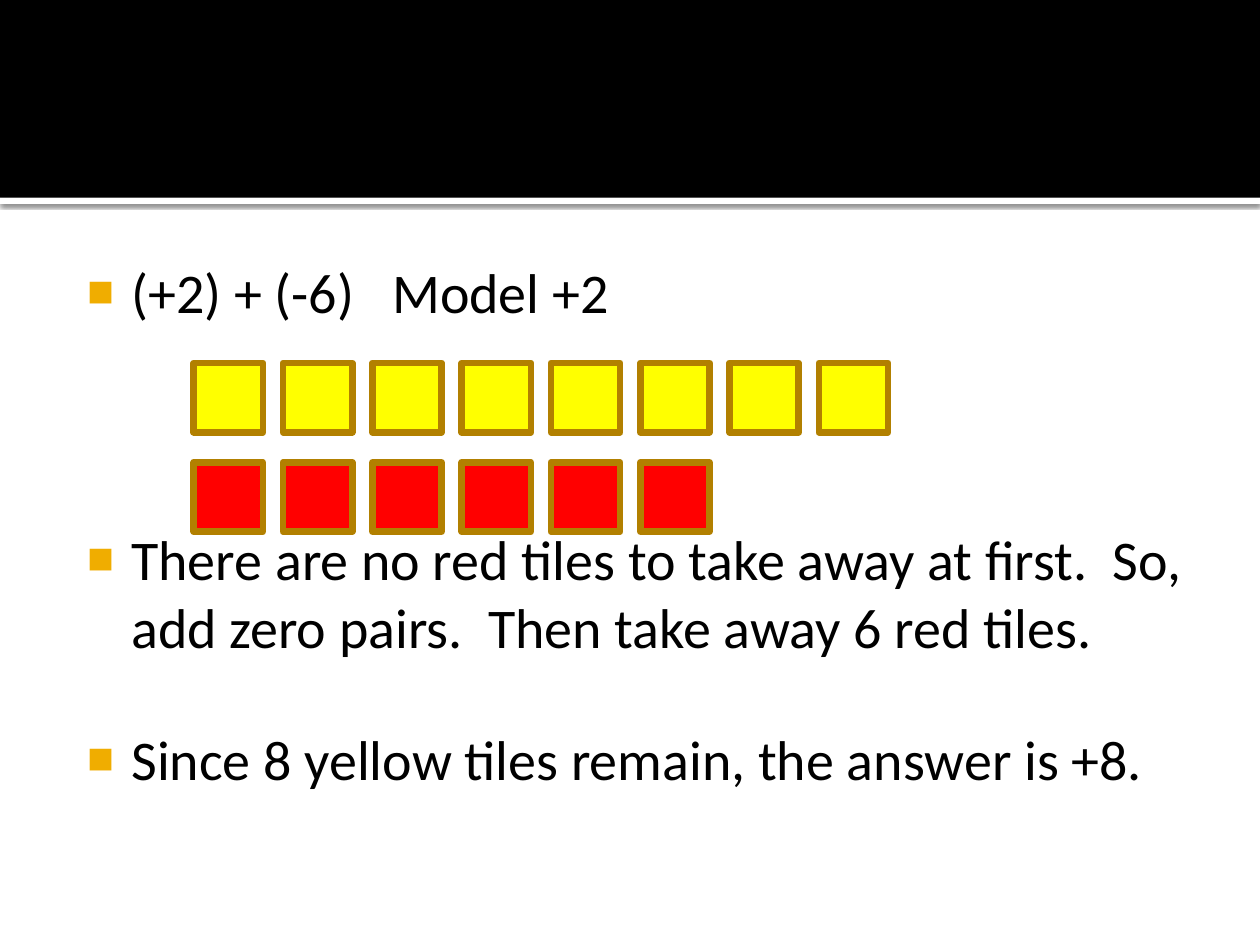
from dataclasses import dataclass

from lxml.etree import SubElement
from pptx import Presentation
from pptx.dml.color import RGBColor
from pptx.enum.shapes import MSO_SHAPE
from pptx.oxml.ns import qn
from pptx.util import Pt


@dataclass(frozen=True)
class Theme:
    black: str = "000000"
    white: str = "FFFFFF"
    gold: str = "F0AD00"
    edge: str = "B28000"
    plus: str = "FFFF00"
    minus: str = "FF0000"
    font: str = "Calibri"
    size: float = 32
    line: float = 3.78


THEME = Theme()


def add_box(slide, left, top, width, height, fill, edge=None):
    box = slide.shapes.add_shape(
        MSO_SHAPE.RECTANGLE, Pt(left), Pt(top), Pt(width), Pt(height))
    box.shadow.inherit = False
    box.fill.solid()
    box.fill.fore_color.rgb = RGBColor.from_string(fill)
    if edge:
        box.line.color.rgb = RGBColor.from_string(edge)
        box.line.width = Pt(THEME.line)
    else:
        box.line.fill.background()
    return box


def add_shade(box):
    """Cast a soft shadow straight down."""
    effects = box._element.spPr.find(qn("a:effectLst"))
    shade = SubElement(effects, qn("a:outerShdw"), blurRad=str(Pt(2.5)),
                       dist=str(Pt(0.8)), dir="5400000", algn="t", rotWithShape="0")
    tone = SubElement(shade, qn("a:srgbClr"), val=THEME.black)
    SubElement(tone, qn("a:alpha"), val="60000")


def add_band(slide, left, top, width, height, rule=3.6):
    """Black band with a white rule under it."""
    add_shade(add_box(slide, left, top + height, width, rule, THEME.white))
    add_box(slide, left, top, width, height, THEME.black)


def add_mark(para):
    """Hanging indent with a gold square bullet."""
    props = para._p.get_or_add_pPr()
    props.set("marL", str(Pt(34.56)))
    props.set("indent", str(Pt(-25.2)))
    tone = SubElement(props, qn("a:buClr"))
    SubElement(tone, qn("a:srgbClr"), val=THEME.gold)
    SubElement(props, qn("a:buSzPct"), val="80000")
    SubElement(props, qn("a:buFont"), typeface="Arial")
    SubElement(props, qn("a:buChar"), char="■")


def add_steps(slide, left, top, width, height, steps):
    """Bulleted steps, each with the gap above it."""
    area = slide.shapes.add_textbox(Pt(left), Pt(top), Pt(width), Pt(height))
    frame = area.text_frame
    frame.word_wrap = True
    frame.margin_left, frame.margin_top = Pt(4.5), Pt(7.2)
    frame.margin_right, frame.margin_bottom = Pt(7.2), Pt(3.6)
    for i, (gap, text) in enumerate(steps):
        para = frame.add_paragraph() if i else frame.paragraphs[0]
        para.space_before = Pt(gap)
        add_mark(para)
        run = para.add_run()
        run.text = text
        run.font.name = THEME.font
        run.font.size = Pt(THEME.size)
        run.font.color.rgb = RGBColor.from_string(THEME.black)


def add_tiles(slide, left, top, width, height, rows):
    """Rows of square tiles, spread over the box by the longest row."""
    side = 39.6
    step = (width - side) / (max(count for count, _ in rows) - 1)
    drop = (height - side) / (len(rows) - 1)
    for r, (count, fill) in enumerate(rows):
        for c in range(count):
            add_box(slide, left + c * step, top + r * drop, side, side,
                    fill, THEME.edge)


def main():
    deck = Presentation()
    deck.slide_width, deck.slide_height = Pt(720), Pt(540)
    slide = deck.slides.add_slide(deck.slide_layouts[6])

    add_band(slide, 0, 0, 720, 113)
    add_steps(slide, 36, 139.7, 648, 364.3, [
        (0, "(+2) + (-6)   Model +2"),
        (114.6, "There are no red tiles to take away at first.  So, "
                "add zero pairs.  Then take away 6 red tiles."),
        (37.4, "Since 8 yellow tiles remain, the answer is +8."),
    ])
    add_tiles(slide, 110.7, 207.4, 396.8, 96.4,
              [(8, THEME.plus), (6, THEME.minus)])

    deck.save("out.pptx")


if __name__ == "__main__":
    main()
